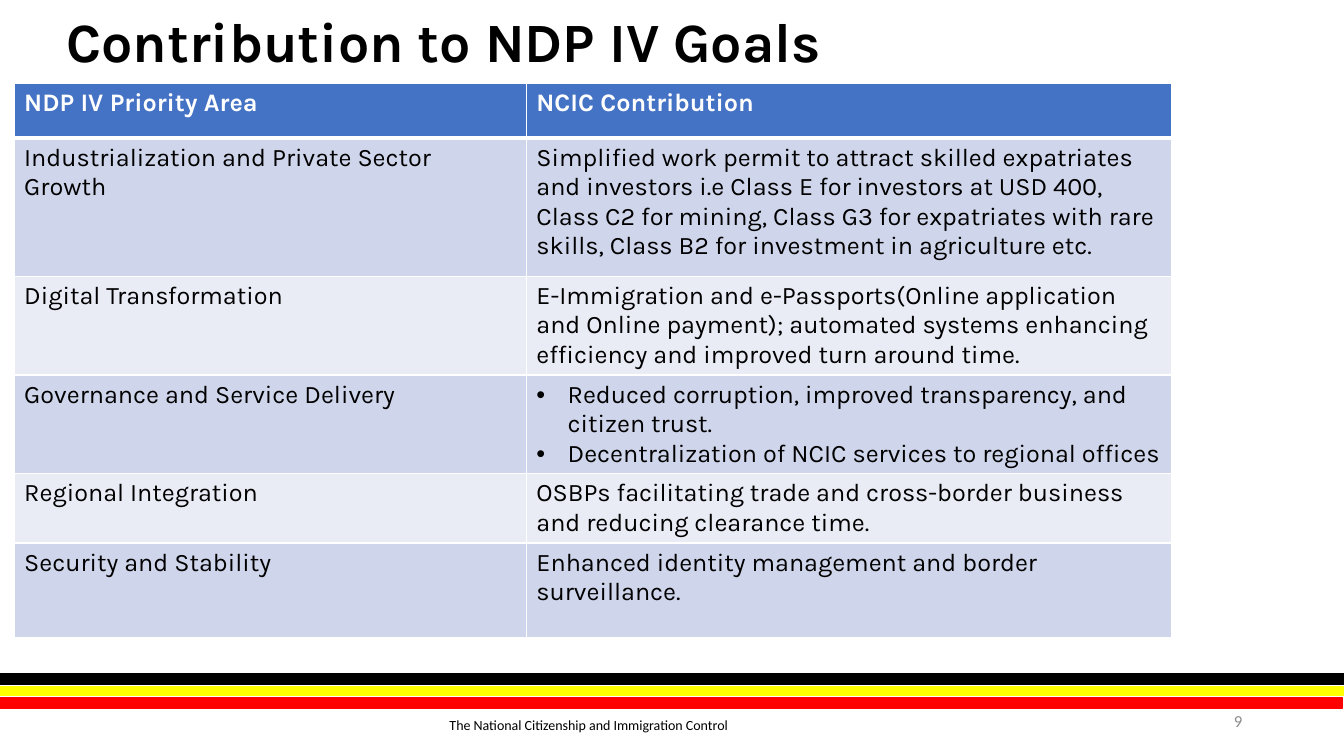
from lxml import etree
from pptx import Presentation
from pptx.dml.color import RGBColor
from pptx.enum.shapes import MSO_SHAPE
from pptx.enum.text import MSO_ANCHOR, PP_ALIGN
from pptx.oxml.ns import qn
from pptx.util import Inches, Pt

RECT = MSO_SHAPE.RECTANGLE
TOP, MIDDLE = MSO_ANCHOR.TOP, MSO_ANCHOR.MIDDLE
LEFT, RIGHT = PP_ALIGN.LEFT, PP_ALIGN.RIGHT

BLACK = RGBColor(0, 0, 0)
WHITE = RGBColor(255, 255, 255)
YELLOW = RGBColor(255, 255, 0)
RED = RGBColor(255, 0, 0)
GREY = RGBColor(0x8C, 0x8C, 0x8C)
BLUE = RGBColor(0x44, 0x72, 0xC4)
BANDS = [RGBColor(0xE9, 0xEB, 0xF5), RGBColor(0xCF, 0xD5, 0xEA)]

# Cell text: a list holds bulleted paragraphs
ROWS = [
    ("NDP IV Priority Area", "NCIC Contribution"),
    ("Industrialization and Private Sector Growth",
     "Simplified work permit to attract skilled expatriates and investors "
     "i.e Class E for investors at USD 400, Class C2 for mining, Class G3 "
     "for expatriates with rare skills, Class B2 for investment in "
     "agriculture etc."),
    ("Digital Transformation",
     "E-Immigration and e-Passports(Online application and Online payment); "
     "automated systems enhancing efficiency and improved turn around time."),
    ("Governance and Service Delivery",
     ["Reduced corruption, improved transparency, and citizen trust.",
      "Decentralization of NCIC services to regional offices"]),
    ("Regional Integration",
     "OSBPs facilitating trade and cross-border business and reducing "
     "clearance time."),
    ("Security and Stability",
     "Enhanced identity management and border surveillance."),
]
WIDTHS = [5.08, 6.4]
HEIGHTS = [0.54, 1.37, 0.94, 0.94, 0.54, 0.94]

# Left, top, height, colour
STRIPES = [
    (0, 6.68, 0.11, BLACK),
    (-0.01, 6.81, 0.09, YELLOW),
    (-0.02, 6.92, 0.11, RED),
]

# Text, box, anchor, alignment, line spacing, font
LABELS = [
    ("The National Citizenship and Immigration Control",
     (4.36, 7.06, 4.6, 0.42), TOP, LEFT, 1.0,
     {"size": Pt(10), "name": "Calibri", "bold": False, "color": BLACK}),
    ("Contribution to NDP IV Goals",
     (0.56, 0.12, 10.83, 0.64), MIDDLE, LEFT, 0.9,
     {"size": Pt(39.6), "name": "Karla", "bold": True, "color": BLACK}),
    ("9", (9.42, 6.95, 3, 0.4), MIDDLE, RIGHT, 1.0,
     {"size": Pt(12), "name": "Calibri", "bold": False, "color": GREY}),
]
HEAD = {"size": Pt(18), "name": "Karla", "bold": True, "color": WHITE}
BODY = {**HEAD, "bold": False, "color": BLACK}


def style(font, look):
    for key, value in look.items():
        if key == "color":
            font.color.rgb = value
        else:
            setattr(font, key, value)


def add_bullet(para):
    props = para._p.get_or_add_pPr()
    props.set("marL", str(Inches(0.31)))
    props.set("indent", str(-Inches(0.31)))
    etree.SubElement(props, qn("a:buFont")).set("typeface", "Arial")
    etree.SubElement(props, qn("a:buChar")).set("char", "•")


def add_edges(cell, top, bottom):
    """Put white borders before the cell fill; widths are in points."""
    props = cell._tc.get_or_add_tcPr()
    sides = [("L", 1), ("R", 1), ("T", top), ("B", bottom)]
    for pos, (side, width) in enumerate(sides):
        line = etree.Element(qn(f"a:ln{side}"), w=str(Pt(width)))
        fill = etree.SubElement(line, qn("a:solidFill"))
        etree.SubElement(fill, qn("a:srgbClr")).set("val", str(WHITE))
        props.insert(pos, line)


def add_stripe(slide, left, top, height, color):
    bar = slide.shapes.add_shape(
        RECT, Inches(left), Inches(top), Inches(13.33), Inches(height))
    bar.shadow.inherit = False
    bar.fill.solid()
    bar.fill.fore_color.rgb = color
    bar.line.color.rgb = color
    bar.line.width = Pt(1)


def add_label(slide, text, box, anchor, align, spacing, look):
    frame = slide.shapes.add_textbox(*map(Inches, box)).text_frame
    frame.word_wrap = True
    frame.vertical_anchor = anchor
    para = frame.paragraphs[0]
    para.alignment = align
    para.line_spacing = spacing
    run = para.add_run()
    run.text = text
    style(run.font, look)


def fill_cell(cell, content, row):
    cell.fill.solid()
    cell.fill.fore_color.rgb = BANDS[row % 2] if row else BLUE
    add_edges(cell, 3 if row == 1 else 1, 1 if row else 3)
    listed = isinstance(content, list)
    lines = content if listed else [content]
    frame = cell.text_frame
    for pos, text in enumerate(lines):
        para = frame.add_paragraph() if pos else frame.paragraphs[0]
        if listed:
            add_bullet(para)
        run = para.add_run()
        run.text = text
        style(run.font, BODY if row else HEAD)


def add_grid(slide):
    grid = slide.shapes.add_table(
        len(ROWS), len(WIDTHS), Inches(0.14), Inches(0.83),
        Inches(sum(WIDTHS)), Inches(sum(HEIGHTS))).table
    grid.first_row = grid.horz_banding = False
    for col, width in zip(grid.columns, WIDTHS):
        col.width = Inches(width)
    for row, (height, cells) in enumerate(zip(HEIGHTS, ROWS)):
        grid.rows[row].height = Inches(height)
        for col, content in enumerate(cells):
            fill_cell(grid.cell(row, col), content, row)


def main():
    deck = Presentation()
    deck.slide_width, deck.slide_height = Inches(13.33), Inches(7.5)
    slide = deck.slides.add_slide(deck.slide_layouts[6])
    for stripe in STRIPES:
        add_stripe(slide, *stripe)
    add_grid(slide)
    for label in LABELS:
        add_label(slide, *label)
    deck.save("out.pptx")


if __name__ == "__main__":
    main()
